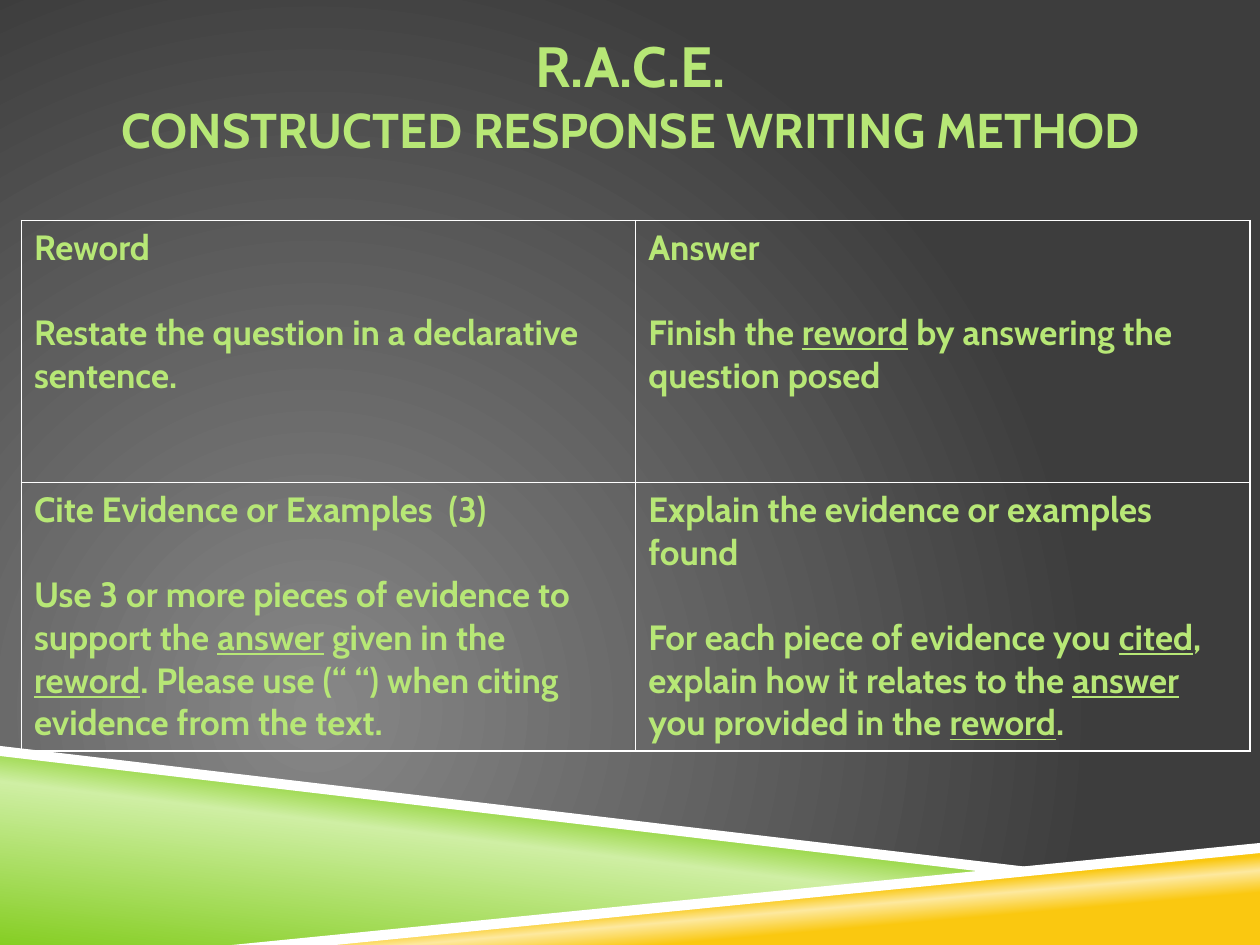
from dataclasses import dataclass
from itertools import product
from lxml.etree import SubElement
from pptx import Presentation
from pptx.dml.color import RGBColor
from pptx.enum.text import MSO_ANCHOR, MSO_AUTO_SIZE, PP_ALIGN
from pptx.oxml.ns import qn
from pptx.util import Inches, Pt


@dataclass(frozen=True)
class Theme:
    """Colours, font and type sizes."""
    font: str = "Cabin"
    text: str = "B7E776"
    line: str = "FFFFFF"
    glow: str = "878787"
    dark: str = "3D3D3D"
    green: str = "86CE24"
    mint: str = "CFEFA4"
    gold: str = "FAC810"
    cream: str = "FDE99F"
    head: float = 32.4
    sub: float = 27.9
    body: float = 20
    gap: float = 24.3


@dataclass(frozen=True)
class Blend:
    """Gradient stops, with an angle or a circle's focus."""
    stops: tuple
    angle: int = 0
    focus: tuple = ()


@dataclass(frozen=True)
class Band:
    """Outline points in inches and a plain or blended fill."""
    points: tuple
    fill: str | Blend


@dataclass(frozen=True)
class Step:
    """One step of the method; underscores mark underlined words."""
    name: str
    task: str


THEME = Theme()
BACK = Blend(((0, THEME.glow), (100, THEME.dark)), focus=(50, 100, 100, 50))
BANDS = (
    Band(((0, 5.97), (7.92, 6.92), (2, 7.5), (0, 7.5)),
         Blend(((0, THEME.green), (52, THEME.mint), (66, THEME.green)), 277)),
    Band(((1.98, 7.5), (10, 6.72), (10, 7.5)),
         Blend(((28, THEME.gold), (40, THEME.cream), (48, THEME.gold)), 265)),
    Band(((0, 5.92), (0, 6), (7.9, 6.93), (8.32, 6.9)), THEME.line),
    Band(((10, 6.69), (1.84, 7.5), (2.66, 7.5), (10, 6.77)), THEME.line),
)
STEPS = (
    (Step("Reword", "Restate the question in a declarative sentence."),
     Step("Answer", "Finish the _reword_ by answering the question posed")),
    (Step("Cite Evidence or Examples  (3)",
          "Use 3 or more pieces of evidence to support the _answer_ given in "
          "the _reword_. Please use (“ “) when citing evidence from the text."),
     Step("Explain the evidence or examples found",
          "For each piece of evidence you _cited_, explain how it relates to "
          "the _answer_ you provided in the _reword_.")),
)


def style(run, size: float) -> None:
    """Give a run the slide's font at a size."""
    font = run.font
    font.name, font.size, font.bold = THEME.font, Pt(size), True
    font.color.rgb = RGBColor.from_string(THEME.text)


def blend(host, look: Blend) -> None:
    """Replace the solid fill inside a host element with a gradient."""
    old = host.find(qn("a:solidFill"))
    grad = SubElement(host, qn("a:gradFill"), rotWithShape="1")
    host.replace(old, grad)
    stops = SubElement(grad, qn("a:gsLst"))
    for place, tone in look.stops:
        stop = SubElement(stops, qn("a:gs"), pos=str(place * 1000))
        SubElement(stop, qn("a:srgbClr"), val=tone)
    if look.focus:
        ring = SubElement(grad, qn("a:path"), path="circle")
        sides = {k: str(v * 1000) for k, v in zip("ltrb", look.focus)}
        SubElement(ring, qn("a:fillToRect"), sides)
    else:
        SubElement(grad, qn("a:lin"), ang=str(look.angle * 60000), scaled="0")


def draw_back(slide) -> None:
    """Fill the background with the grey glow."""
    slide.background.fill.solid()
    blend(slide.element.xpath(".//p:bgPr")[0], BACK)


def draw_band(slide, band: Band) -> None:
    """Draw one slanted band."""
    first, *rest = [(Inches(x), Inches(y)) for x, y in band.points]
    pen = slide.shapes.build_freeform(*first)
    pen.add_line_segments(rest, close=True)
    shape = pen.convert_to_shape()
    shape.shadow.inherit = False
    shape.line.fill.background()
    shape.fill.solid()
    if isinstance(band.fill, Blend):
        blend(shape.element.spPr, band.fill)
    else:
        shape.fill.fore_color.rgb = RGBColor.from_string(band.fill)


def draw_title(slide) -> None:
    """Set the two-line title."""
    title = slide.shapes.title
    title.left, title.top = Inches(0.17), Inches(0.25)
    title.width, title.height = Inches(9.67), Inches(1)
    frame = title.text_frame
    frame.text = "R.A.C.E.\nCONSTRUCTED RESPONSE WRITING METHOD"
    frame.auto_size, frame.word_wrap = MSO_AUTO_SIZE.NONE, True
    frame.vertical_anchor = MSO_ANCHOR.MIDDLE
    frame.margin_left = frame.margin_right = 0
    for para, size in zip(frame.paragraphs, (THEME.head, THEME.sub)):
        para.alignment = PP_ALIGN.CENTER
        style(para.runs[0], size)


def rule_cell(cell) -> None:
    """Clear a cell's fill and rule its four sides."""
    cell.fill.background()
    props = cell._tc.get_or_add_tcPr()
    for spot, side in enumerate("LRTB"):
        line = SubElement(props, qn(f"a:ln{side}"), w=str(Pt(1)))
        fill = SubElement(line, qn("a:solidFill"))
        SubElement(fill, qn("a:srgbClr"), val=THEME.line)
        props.insert(spot, line)


def fill_cell(cell, step: Step) -> None:
    """Write a step's name and task."""
    rule_cell(cell)
    frame = cell.text_frame
    frame.text = step.name
    style(frame.paragraphs[0].runs[0], THEME.body)
    para = frame.add_paragraph()
    para.space_before = Pt(THEME.gap)
    for spot, part in enumerate(step.task.split("_")):
        run = para.add_run()
        run.text = part
        style(run, THEME.body)
        if spot % 2:
            run.font.underline = True


def draw_grid(slide) -> None:
    """Draw the table of four steps."""
    table = slide.shapes.add_table(2, 2, Inches(0.17), Inches(1.75),
                                   Inches(9.75), Inches(4.16)).table
    table.first_row = table.horz_banding = False
    for row, col in product(range(2), repeat=2):
        fill_cell(table.cell(row, col), STEPS[row][col])


def main() -> None:
    """Build and save the slide."""
    deck = Presentation()
    deck.slide_width, deck.slide_height = Inches(10), Inches(7.5)
    slide = deck.slides.add_slide(deck.slide_layouts[5])
    draw_back(slide)
    for band in BANDS:
        draw_band(slide, band)
    draw_title(slide)
    draw_grid(slide)
    deck.save("out.pptx")


if __name__ == "__main__":
    main()
